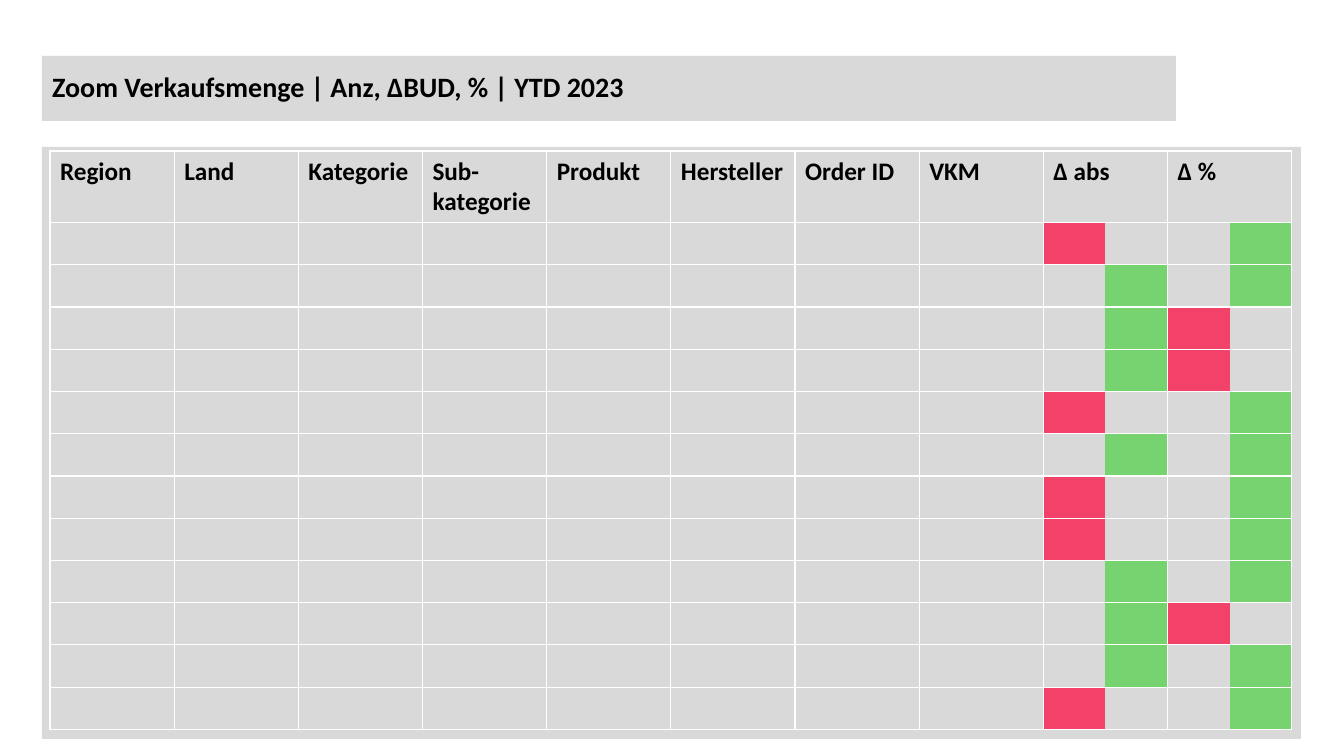
from lxml import etree
from pptx import Presentation
from pptx import util as u
from pptx.dml.color import RGBColor
from pptx.enum import shapes, text
from pptx.oxml.ns import qn

TITLE = "Zoom Verkaufsmenge | Anz, ΔBUD, % | YTD 2023"
HEADERS = ["Region", "Land", "Kategorie", "Sub-kategorie", "Produkt",
           "Hersteller", "Order ID", "VKM", "Δ abs", "Δ %"]
# One pair per row: sign of "Δ abs", sign of "Δ %"
SIGNS = ["-+", "++", "+-", "+-", "-+", "++", "-+", "-+", "++", "+-", "++", "-+"]
COLORS = {"panel": "D9D9D9", "minus": "F24269", "plus": "77D36F",
          "text": "000000", "border": "FFFFFF"}
HALVES = {"-": ("minus", "panel"), "+": ("panel", "plus")}

SLIDE_SIZE = (1344, 756)
PANEL = (42, 147, 1259, 592)
TITLE_BOX = (42, 56, 1134, 65)
TABLE = (50, 151, 1242, 578)
HEADER_HEIGHT = 71


def px(length):
    return u.Emu(round(length * 914400 / 100.8))


def color(name):
    return RGBColor.from_string(COLORS[name])


def write(frame, words, size, anchor, line_spacing=None):
    frame.word_wrap = True
    frame.vertical_anchor = anchor
    para = frame.paragraphs[0]
    para.alignment = text.PP_ALIGN.LEFT
    para.line_spacing = line_spacing
    span = para.add_run()
    span.text = words
    span.font.name = "Calibri"
    span.font.size = u.Pt(size)
    span.font.bold = True
    span.font.color.rgb = color("text")


def add_borders(cell):
    properties = cell._tc.get_or_add_tcPr()
    for side in ("a:lnL", "a:lnR", "a:lnT", "a:lnB"):
        line = etree.SubElement(properties, qn(side), w=str(u.Pt(1)))
        fill = etree.SubElement(line, qn("a:solidFill"))
        etree.SubElement(fill, qn("a:srgbClr"), val=COLORS["border"])


def split_fill(cell, names):
    """Colour the left and right half of a cell with a hard edge between."""
    cell.fill.gradient()
    cell.fill.gradient_angle = 0
    for stop, name in zip(cell.fill.gradient_stops, names):
        stop.position = 0.5
        stop.color.rgb = color(name)


def add_panel(page):
    panel = page.shapes.add_shape(shapes.MSO_SHAPE.RECTANGLE, *map(px, PANEL))
    panel.shadow.inherit = False
    panel.fill.solid()
    panel.fill.fore_color.rgb = color("panel")
    panel.line.fill.background()


def add_title(page):
    title = page.shapes.title
    title.left, title.top, title.width, title.height = map(px, TITLE_BOX)
    title.fill.solid()
    title.fill.fore_color.rgb = color("panel")
    title.text_frame.auto_size = text.MSO_AUTO_SIZE.NONE
    write(title.text_frame, TITLE, 20, text.MSO_ANCHOR.MIDDLE, line_spacing=0.9)


def add_sales_table(page):
    table = page.shapes.add_table(len(SIGNS) + 1, len(HEADERS), *map(px, TABLE)).table
    table.horz_banding = False
    for column in table.columns:
        column.width = px(TABLE[2] / len(HEADERS))
    for row in table.rows:
        row.height = px((TABLE[3] - HEADER_HEIGHT) / len(SIGNS))
    table.rows[0].height = px(HEADER_HEIGHT)

    for cell in table.iter_cells():
        add_borders(cell)
        cell.fill.background()
    for column, header in enumerate(HEADERS):
        write(table.cell(0, column).text_frame, header, 18, text.MSO_ANCHOR.TOP)
    first_delta = HEADERS.index("Δ abs")
    for row, signs in enumerate(SIGNS, 1):
        for column, sign in enumerate(signs, first_delta):
            split_fill(table.cell(row, column), HALVES[sign])


def main():
    deck = Presentation()
    deck.slide_width, deck.slide_height = map(px, SLIDE_SIZE)
    page = deck.slides.add_slide(deck.slide_layouts[5])
    add_panel(page)
    add_title(page)
    add_sales_table(page)
    deck.save("out.pptx")


if __name__ == "__main__":
    main()
